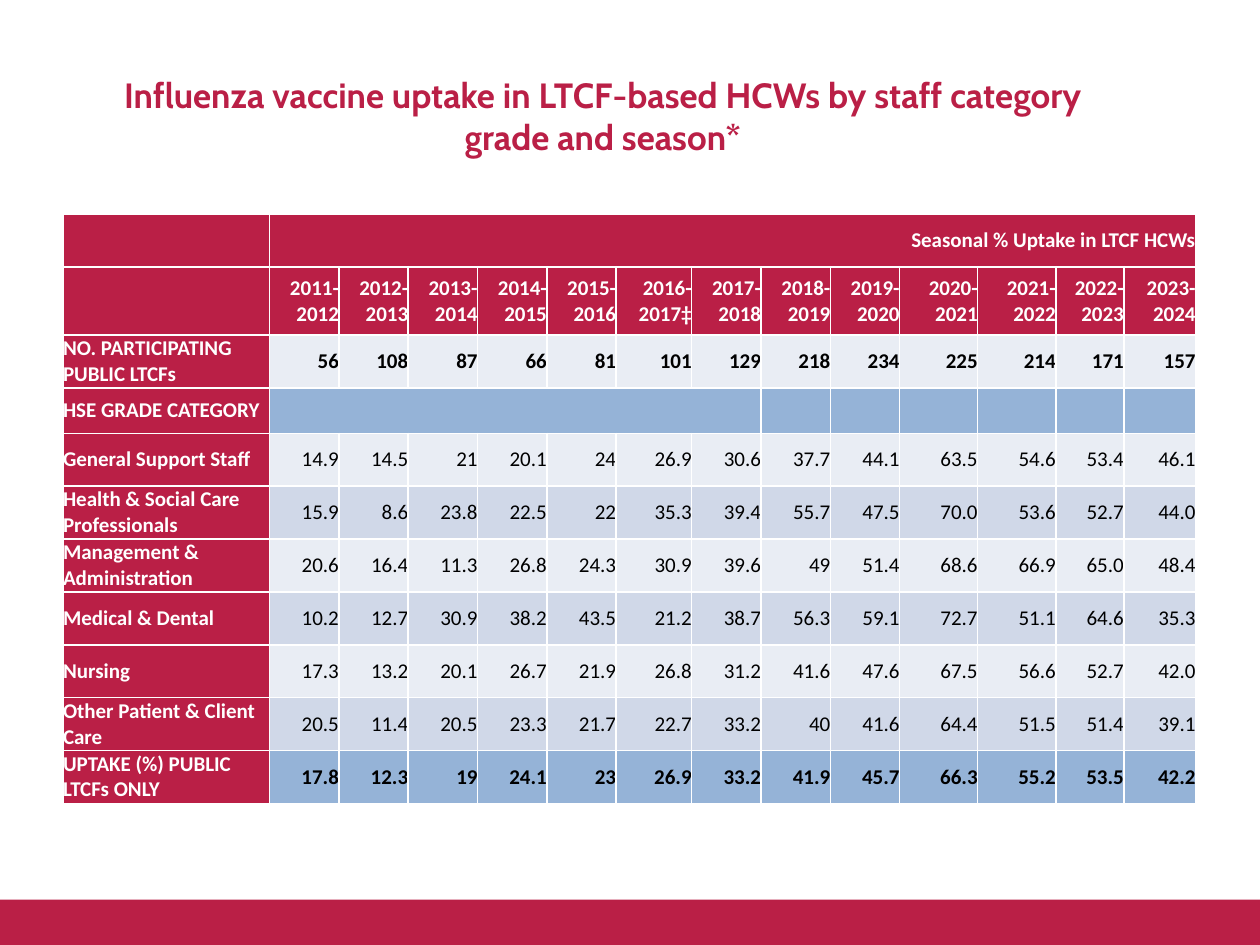
from dataclasses import dataclass

from lxml import etree
from pptx import Presentation
from pptx import util as u
from pptx.dml.color import RGBColor
from pptx.enum import shapes, text
from pptx.oxml.ns import qn


@dataclass(frozen=True)
class Theme:
    crimson: str = "BA1F46"
    white: str = "FFFFFF"
    black: str = "000000"
    pale: str = "E9EDF4"
    mid: str = "D0D8E8"
    blue: str = "95B3D7"
    title_font: str = "Cabin"
    body_font: str = "Calibri"
    title_size: int = 20
    body_size: int = 12
    thin: float = 1
    thick: float = 1.5


THEME = Theme()
COLUMN_WIDTHS = [1.64] + [0.55] * 5 + [0.6] + [0.55] * 3 + [0.62, 0.62, 0.54, 0.57]
ROW_HEIGHTS = [0.42, 0.54, 0.42, 0.36] + [0.42] * 7

SEASONS = ("2011-2012 2012-2013 2013-2014 2014-2015 2015-2016 2016-2017‡ 2017-2018 "
           "2018-2019 2019-2020 2020-2021 2021-2022 2022-2023 2023-2024")

# Label, values, fill of the values, colour of the values, bold values
ROWS = [
    ("", "", THEME.crimson, THEME.white, True),
    ("", SEASONS, THEME.crimson, THEME.white, True),
    ("NO. PARTICIPATING PUBLIC LTCFs",
     "56 108 87 66 81 101 129 218 234 225 214 171 157", THEME.pale, THEME.black, True),
    ("HSE GRADE CATEGORY", "", THEME.blue, THEME.black, True),
    ("General Support Staff",
     "14.9 14.5 21 20.1 24 26.9 30.6 37.7 44.1 63.5 54.6 53.4 46.1",
     THEME.pale, THEME.black, False),
    ("Health & Social Care Professionals",
     "15.9 8.6 23.8 22.5 22 35.3 39.4 55.7 47.5 70.0 53.6 52.7 44.0",
     THEME.mid, THEME.black, False),
    ("Management & Administration",
     "20.6 16.4 11.3 26.8 24.3 30.9 39.6 49 51.4 68.6 66.9 65.0 48.4",
     THEME.pale, THEME.black, False),
    ("Medical & Dental",
     "10.2 12.7 30.9 38.2 43.5 21.2 38.7 56.3 59.1 72.7 51.1 64.6 35.3",
     THEME.mid, THEME.black, False),
    ("Nursing",
     "17.3 13.2 20.1 26.7 21.9 26.8 31.2 41.6 47.6 67.5 56.6 52.7 42.0",
     THEME.pale, THEME.black, False),
    ("Other Patient & Client Care",
     "20.5 11.4 20.5 23.3 21.7 22.7 33.2 40 41.6 64.4 51.5 51.4 39.1",
     THEME.mid, THEME.black, False),
    ("UPTAKE (%) PUBLIC LTCFs ONLY",
     "17.8 12.3 19 24.1 23 26.9 33.2 41.9 45.7 66.3 55.2 53.5 42.2",
     THEME.blue, THEME.black, True),
]


def inches(*lengths):
    return [u.Inches(length) for length in lengths]


def set_font(para, name, size, colour, bold):
    font = para.font
    font.name, font.size, font.bold = name, u.Pt(size), bold
    font.color.rgb = RGBColor.from_string(colour)


def add_title(page, box, words):
    title = page.shapes.title
    title.left, title.top, title.width, title.height = inches(*box)
    frame = title.text_frame
    frame.text = words
    frame.vertical_anchor = text.MSO_ANCHOR.MIDDLE
    para = frame.paragraphs[0]
    para.alignment = text.PP_ALIGN.CENTER
    set_font(para, THEME.title_font, THEME.title_size, THEME.crimson, True)


def add_footer_band(page, box):
    band = page.shapes.add_shape(shapes.MSO_SHAPE.RECTANGLE, *inches(*box))
    band.shadow.inherit = False
    band.fill.solid()
    band.fill.fore_color.rgb = RGBColor.from_string(THEME.crimson)
    band.line.fill.background()


def set_borders(cell, top, bottom):
    properties = cell._tc.get_or_add_tcPr()
    widths = {"a:lnL": THEME.thin, "a:lnR": THEME.thin, "a:lnT": top, "a:lnB": bottom}
    for side, width in widths.items():
        line = etree.SubElement(properties, qn(side), w=str(u.Pt(width)))
        fill = etree.SubElement(line, qn("a:solidFill"))
        etree.SubElement(fill, qn("a:srgbClr"), val=THEME.white)


def format_cell(cell, words, fill, colour, bold, align, top, bottom):
    cell.margin_left = cell.margin_right = cell.margin_top = cell.margin_bottom = 0
    cell.vertical_anchor = text.MSO_ANCHOR.MIDDLE
    set_borders(cell, top, bottom)
    cell.fill.solid()
    cell.fill.fore_color.rgb = RGBColor.from_string(fill)
    cell.text = words
    para = cell.text_frame.paragraphs[0]
    para.alignment = align
    set_font(para, THEME.body_font, THEME.body_size, colour, bold)


def add_uptake_table(page, box):
    column_count = len(COLUMN_WIDTHS)
    frame = page.shapes.add_table(len(ROWS), column_count, *inches(*box))
    table = frame.table
    table.horz_banding = False
    for column, width in zip(table.columns, COLUMN_WIDTHS):
        column.width = u.Inches(width)
    for row, height in zip(table.rows, ROW_HEIGHTS):
        row.height = u.Inches(height)

    for index, (label, values, fill, colour, bold) in enumerate(ROWS):
        top = THEME.thick if index == 1 else THEME.thin
        bottom = THEME.thick if index == 0 else THEME.thin
        format_cell(table.cell(index, 0), label, THEME.crimson, THEME.white, True,
                    text.PP_ALIGN.LEFT, top, bottom)
        words = values.split() or [""] * (column_count - 1)
        if index == 0:
            words[0] = "Seasonal % Uptake in LTCF HCWs"
        for column, word in enumerate(words, start=1):
            format_cell(table.cell(index, column), word, fill, colour, bold,
                        text.PP_ALIGN.RIGHT, top, bottom)

    table.cell(0, 1).merge(table.cell(0, column_count - 1))
    table.cell(3, 1).merge(table.cell(3, 7))


def main():
    deck = Presentation()
    deck.slide_width, deck.slide_height = inches(10, 7.5)
    page = deck.slides.add_slide(deck.slide_layouts.get_by_name("Title Only"))
    add_title(page, (0.83, 0.37, 7.91, 1.09),
              "Influenza vaccine uptake in LTCF-based HCWs by staff category grade and season*")
    add_footer_band(page, (0, 7.14, 10, 0.36))
    add_uptake_table(page, (0.5, 1.7, 9, 4.64))
    deck.save("out.pptx")


if __name__ == "__main__":
    main()
